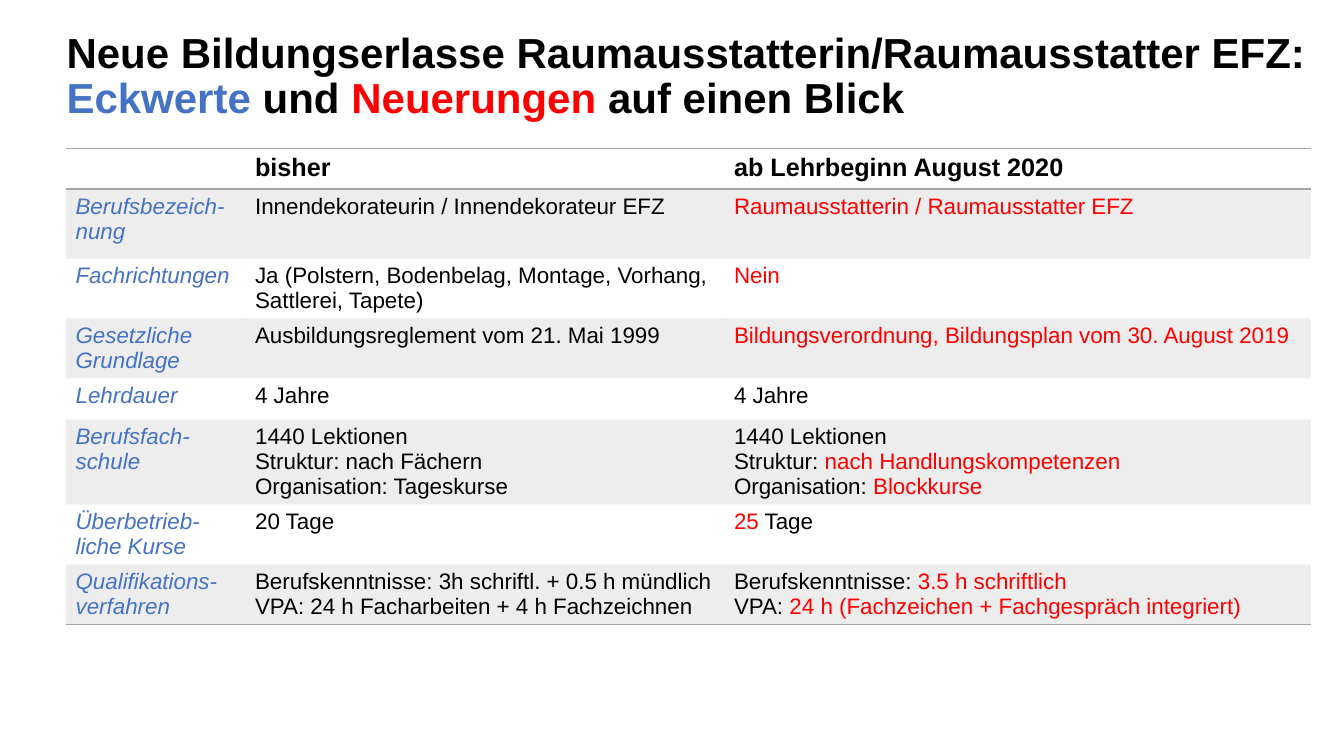
from lxml.etree import SubElement
from pptx import Presentation
from pptx.dml.color import RGBColor
from pptx.enum.text import MSO_ANCHOR, MSO_AUTO_SIZE, PP_ALIGN
from pptx.oxml import parse_xml
from pptx.oxml.ns import nsdecls, qn
from pptx.util import Inches, Pt

BLACK, BLUE, RED, GRAY = "000000", "4472C4", "FF0000", "A5A5A5"
PLAIN = "{2D5ABB26-0587-4C30-8999-92F81FD0307C}"  # no style, no grid

# Content: lists of (text, colour) runs, one list per line
TITLE = [
    [("Neue Bildungserlasse Raumausstatterin/Raumausstatter EFZ:", BLACK)],
    [("Eckwerte", BLUE), (" und ", BLACK), ("Neuerungen ", RED),
     ("auf einen Blick", BLACK)],
]

# Table cells: lines are split by "\n", red parts stand between asterisks
ROWS = [
    ("", "bisher", "ab Lehrbeginn August 2020"),
    ("Berufsbezeich-nung", "Innendekorateurin / Innendekorateur EFZ",
     "*Raumausstatterin / Raumausstatter EFZ*"),
    ("Fachrichtungen",
     "Ja (Polstern, Bodenbelag, Montage, Vorhang, Sattlerei, Tapete)",
     "*Nein*"),
    ("Gesetzliche Grundlage", "Ausbildungsreglement vom 21. Mai 1999",
     "*Bildungsverordnung, Bildungsplan vom 30. August 2019*"),
    ("Lehrdauer", "4 Jahre", "4 Jahre"),
    ("Berufsfach-schule",
     "1440 Lektionen\nStruktur: nach Fächern\nOrganisation: Tageskurse",
     "1440 Lektionen\nStruktur: *nach Handlungskompetenzen*\n"
     "Organisation: *Blockkurse*"),
    ("Überbetrieb-liche Kurse", "20 Tage", "*25* Tage"),
    ("Qualifikations-verfahren",
     "Berufskenntnisse: 3h schriftl. + 0.5 h mündlich\n"
     "VPA: 24 h Facharbeiten + 4 h Fachzeichnen",
     "Berufskenntnisse: *3.5 h schriftlich*\n"
     "VPA: *24 h (Fachzeichen + Fachgespräch integriert)*"),
]
WIDTHS = [1.78, 4.75, 5.82]
HEIGHTS = [0.38, 0.69, 0.59, 0.59, 0.41, 0.84, 0.59, 0.59]


def paint(font, color):
    font.color.rgb = RGBColor.from_string(color)


def write(para, parts, size, bold=False, italic=False):
    for text, color in parts:
        run = para.add_run()
        run.text = text
        font = run.font
        font.name, font.size = "Arial", Pt(size)
        font.bold, font.italic = bold, italic
        paint(font, color)


def rule(cell, side):
    """Draw a thin gray line along one side of a cell."""
    cell._tc.get_or_add_tcPr().append(parse_xml(
        f'<a:{side} {nsdecls("a")} w="12700"><a:solidFill>'
        f'<a:srgbClr val="{GRAY}"/></a:solidFill></a:{side}>'))


def shade(cell):
    """Fill a cell with gray at 20 percent."""
    cell.fill.solid()
    paint_fill = cell.fill.fore_color
    paint_fill.rgb = RGBColor.from_string(GRAY)
    tint = cell._tc.tcPr.find(f'{qn("a:solidFill")}/{qn("a:srgbClr")}')
    SubElement(tint, qn("a:alpha")).set("val", "20000")


def fill_cell(cell, text, row, col):
    base = BLUE if col == 0 else BLACK
    frame = cell.text_frame
    for i, line in enumerate(text.split("\n")):
        para = frame.add_paragraph() if i else frame.paragraphs[0]
        parts = [(part, RED if k % 2 else base)
                 for k, part in enumerate(line.split("*")) if part]
        write(para, parts, 16 if row else 18, bold=row == 0,
              italic=col == 0)


def main():
    deck = Presentation()
    deck.slide_width, deck.slide_height = Inches(13.33), Inches(7.5)
    slide = deck.slides.add_slide(deck.slide_layouts[5])

    # Title
    title = slide.shapes.title
    title.left, title.top = Inches(0.56), Inches(0.4)
    title.width, title.height = Inches(12.53), Inches(0.74)
    frame = title.text_frame
    frame.word_wrap = True
    frame.auto_size = MSO_AUTO_SIZE.NONE
    frame.vertical_anchor = MSO_ANCHOR.MIDDLE
    para = frame.paragraphs[0]
    para.alignment, para.line_spacing = PP_ALIGN.LEFT, 0.9
    for i, line in enumerate(TITLE):
        if i:
            para.add_line_break()
        write(para, line, 30, bold=True)

    # Table
    table = slide.shapes.add_table(
        len(ROWS), len(WIDTHS), Inches(0.65), Inches(1.47),
        Inches(sum(WIDTHS)), Inches(sum(HEIGHTS))).table
    table._tbl.tblPr.find(qn("a:tableStyleId")).text = PLAIN
    for col, width in zip(table.columns, WIDTHS):
        col.width = Inches(width)
    last = len(ROWS) - 1
    for r, texts in enumerate(ROWS):
        table.rows[r].height = Inches(HEIGHTS[r])
        for c, text in enumerate(texts):
            cell = table.cell(r, c)
            fill_cell(cell, text, r, c)
            if r == 0:
                rule(cell, "lnT")
            if r in (0, last):
                rule(cell, "lnB")
            if r % 2:
                shade(cell)
            else:
                cell.fill.background()

    deck.save("out.pptx")


if __name__ == "__main__":
    main()
